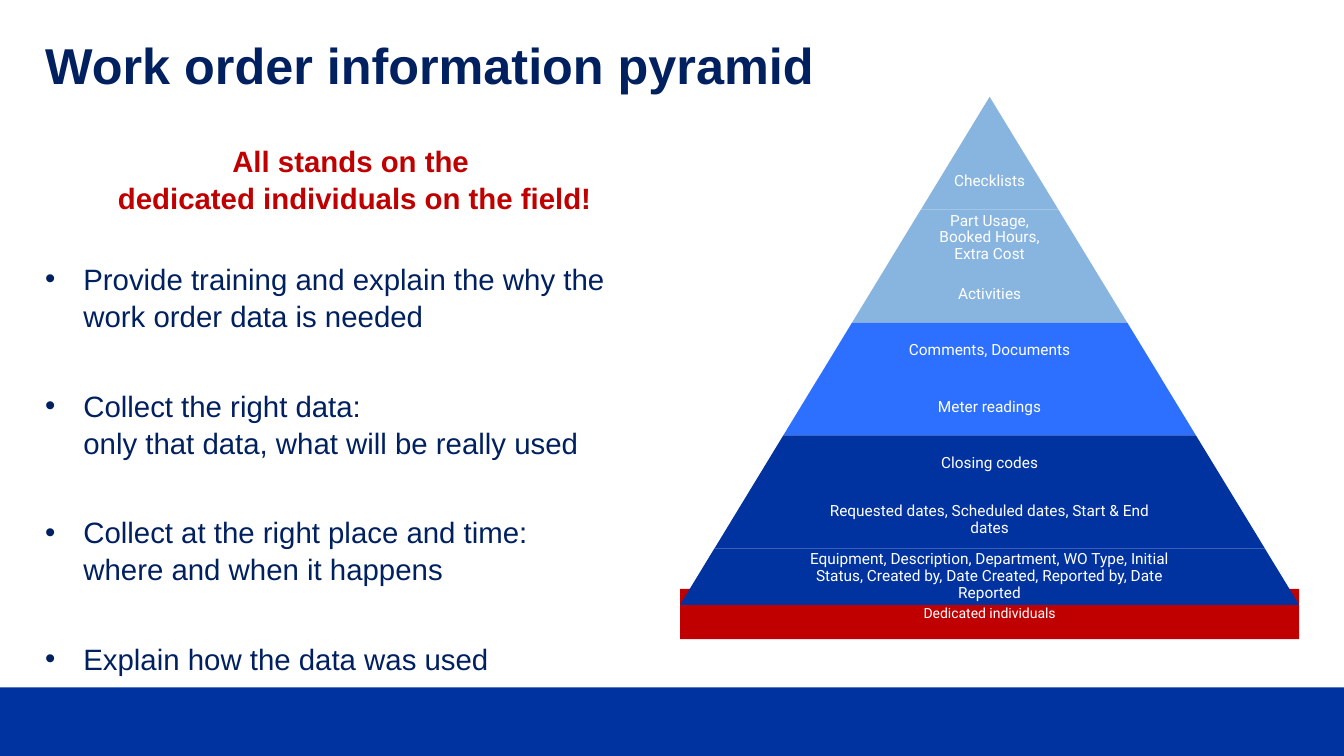
from copy import deepcopy
from lxml import etree
from pptx import Presentation
from pptx import util as u
from pptx.dml.color import RGBColor
from pptx.enum import shapes, text
from pptx.oxml import ns

NAVY = RGBColor(0x00, 0x20, 0x60)
BLUE = RGBColor(0x00, 0x33, 0xA0)
MID = RGBColor(0x2D, 0x70, 0xFF)
PALE = RGBColor(0x88, 0xB5, 0xE0)
RED = RGBColor(0xC0, 0x00, 0x00)
WHITE = RGBColor(0xFF, 0xFF, 0xFF)
LEFT, CENTER = text.PP_ALIGN.LEFT, text.PP_ALIGN.CENTER
TOP, MIDDLE = text.MSO_ANCHOR.TOP, text.MSO_ANCHOR.MIDDLE


def write(frame, words, size=11, font="Roboto", color=WHITE, bold=False, align=CENTER,
          anchor=MIDDLE, inset=0.05, line=0.9, after=0, bullet=None):
    frame.word_wrap = True
    frame.auto_size = text.MSO_AUTO_SIZE.NONE
    frame.vertical_anchor = anchor
    frame.margin_left = frame.margin_right = u.Cm(inset)
    frame.margin_top = frame.margin_bottom = u.Cm(inset)
    para = frame.add_paragraph() if frame.text else frame.paragraphs[0]
    para.text = words
    para.alignment = align
    para.line_spacing = line
    para.space_before = u.Pt(0)
    para.space_after = u.Pt(after)
    props = para._p.get_or_add_pPr()
    hang = u.Cm(0.96) if bullet else 0
    props.set("marL", str(hang))
    props.set("indent", str(-hang))
    mark = etree.SubElement(props, ns.qn("a:buChar" if bullet else "a:buNone"))
    if bullet:
        mark.set("char", bullet)
    for run in para.runs:
        run.font.size = u.Pt(size)
        run.font.name = font
        run.font.bold = bold
        run.font.color.rgb = color
    for gap in para._p.findall(ns.qn("a:br")):
        gap.append(deepcopy(para.runs[0]._r.rPr))


def draw(kind, left, top, width, height, color):
    shape = slide.shapes.add_shape(kind, u.Cm(left), u.Cm(top), u.Cm(width), u.Cm(height))
    shape.shadow.inherit = False
    shape.fill.solid()
    shape.fill.fore_color.rgb = color
    shape.line.fill.background()
    return shape


deck = Presentation()
deck.slide_width, deck.slide_height = u.Cm(33.87), u.Cm(19.05)
slide = deck.slides.add_slide(deck.slide_layouts[1])

title, body = slide.placeholders
title.left, title.top, title.width, title.height = u.Cm(1.14), u.Cm(1.04), u.Cm(31.6), u.Cm(2.08)
write(title.text_frame, "Work order information pyramid", size=36, font="Arial",
      color=NAVY, bold=True, align=LEFT, anchor=TOP, inset=0)

body.left, body.top, body.width, body.height = u.Cm(1.14), u.Cm(3.56), u.Cm(15.6), u.Cm(12.8)
write(body.text_frame, "All stands on the \ndedicated individuals on the field!", size=21,
      font="Arial", color=RED, bold=True, anchor=TOP, inset=0, line=1.05, after=31.5)
points = [
    "Provide training and explain the why the work order data is needed",
    "Collect the right data:\nonly that data, what will be really used",
    "Collect at the right place and time:\nwhere and when it happens",
    "Explain how the data was used",
]
for point in points:
    write(body.text_frame, point, size=21, font="Arial", color=NAVY, align=LEFT,
          anchor=TOP, inset=0, line=1.05, after=37.5, bullet="•")

RECT, TRAP = shapes.MSO_SHAPE.RECTANGLE, shapes.MSO_SHAPE.TRAPEZOID
draw(RECT, 0, 17.32, 33.87, 1.73, BLUE)
base = draw(RECT, 17.14, 14.84, 15.6, 1.27, RED)
write(base.text_frame, "Dedicated individuals", size=10)

tiers = [
    ("", PALE),
    ("Checklists", PALE),
    ("Part Usage, Booked Hours, Extra Cost", PALE),
    ("Activities", PALE),
    ("Comments, Documents", MID),
    ("Meter readings", MID),
    ("Closing codes", BLUE),
    ("Requested dates, Scheduled dates, Start & End dates", BLUE),
    ("Equipment, Description, Department, WO Type, Initial Status, "
     "Created by, Date Created, Reported by, Date Reported", BLUE),
]
middle, peak = 24.94, 2.44
step, grow = 12.8 / len(tiers), 15.6 / len(tiers)
for i, (label, color) in enumerate(tiers):
    top, width = peak + i * step, (i + 1) * grow
    tier = draw(TRAP, middle - width / 2, top, width, step, color)
    tier.adjustments[0] = grow / 2 / step
    if label:
        inner = width * 0.65
        box = slide.shapes.add_textbox(u.Cm(middle - inner / 2), u.Cm(top), u.Cm(inner), u.Cm(step))
        write(box.text_frame, label)

deck.save("out.pptx")
